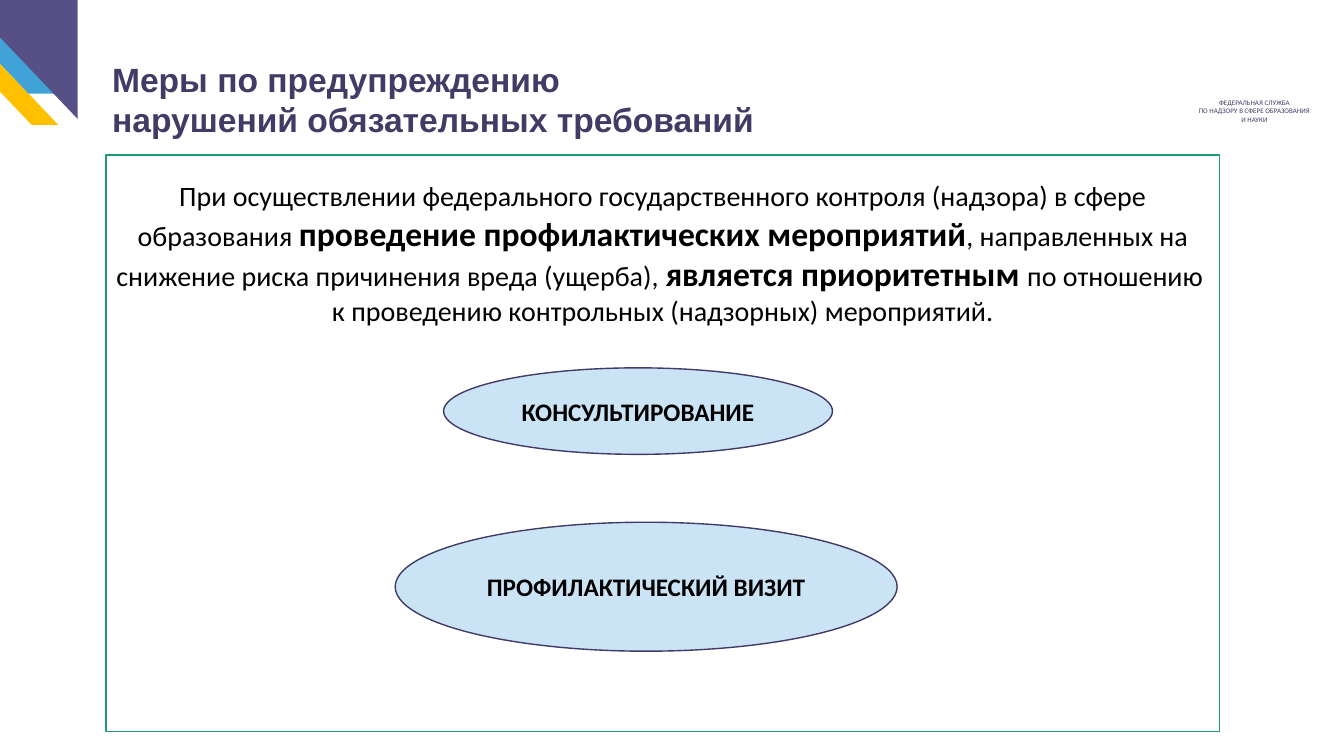
from pptx import Presentation
from pptx.dml.color import RGBColor
from pptx.enum.shapes import MSO_SHAPE
from pptx.enum.text import MSO_ANCHOR, PP_ALIGN
from pptx.util import Cm, Pt

RECTANGLE, OVAL = MSO_SHAPE.RECTANGLE, MSO_SHAPE.OVAL
TOP, MIDDLE = MSO_ANCHOR.TOP, MSO_ANCHOR.MIDDLE
LEFT, CENTER = PP_ALIGN.LEFT, PP_ALIGN.CENTER

CORNER = [
    ("FFC000", [(0, 1.6), (1.47, 3.15), (0.8, 3.15), (0, 2.31)]),
    ("41A2D8", [(0, 0.9), (1.4, 2.36), (0.72, 2.36), (0, 1.6)]),
    ("565087", [(0, 0), (1.96, 0), (1.96, 3), (0, 0.94)]),
]
MEASURES = [
    ("КОНСУЛЬТИРОВАНИЕ", (11.18, 9.27, 9.8, 2.18)),
    ("ПРОФИЛАКТИЧЕСКИЙ ВИЗИТ", (9.96, 13.16, 12.65, 3.25)),
]


def color(value):
    return RGBColor.from_string(value)


class SlideBuilder:
    ink = "413B66"
    plain = {"name": "Calibri", "size": Pt(20), "bold": False}
    strong = {"name": "Calibri", "size": Pt(24), "bold": True}
    label = {"name": "Calibri", "size": Pt(18), "bold": True}
    small = {"name": "Calibri", "size": Pt(5), "bold": False}
    heading = {"name": "Arial", "size": Pt(24), "bold": True}

    def __init__(self, page):
        self.page = page

    def paint(self, shape, fill, line=None):
        shape.shadow.inherit = False
        shape.fill.solid()
        shape.fill.fore_color.rgb = color(fill)
        if line:
            shape.line.color.rgb = color(line)
            shape.line.width = Pt(1)
        else:
            shape.line.fill.background()

    def fill_text(self, shape, paragraphs, ink, align=CENTER, anchor=TOP, **frame_format):
        frame = shape.text_frame
        settings = {"word_wrap": True, "vertical_anchor": anchor, **frame_format}
        for name, value in settings.items():
            setattr(frame, name, value)
        for index, spans in enumerate(paragraphs):
            para = frame.add_paragraph() if index else frame.paragraphs[0]
            para.alignment = align
            for text, style in spans:
                for number, part in enumerate(text.split("\n")):
                    if number:
                        para.add_line_break()
                    span = para.add_run()
                    span.text = part
                    for name, value in style.items():
                        setattr(span.font, name, value)
                    span.font.color.rgb = color(ink)

    def polygon(self, points, fill):
        corners = [(Cm(x), Cm(y)) for x, y in points]
        outline = self.page.shapes.build_freeform(*corners[0])
        outline.add_line_segments(corners[1:], close=True)
        self.paint(outline.convert_to_shape(), fill)

    def title(self, lines, area):
        box = self.page.shapes.title
        for name, value in zip(("left", "top", "width", "height"), area):
            setattr(box, name, Cm(value))
        self.fill_text(box, [[(line, self.heading)] for line in lines], self.ink, LEFT)

    def caption(self, lines, area):
        box = self.page.shapes.add_textbox(*map(Cm, area))
        self.fill_text(box, [[(line, self.small)] for line in lines], self.ink)

    def panel(self, kind, area, fill, line, spans, **frame_format):
        box = self.page.shapes.add_shape(kind, *map(Cm, area))
        self.paint(box, fill, line)
        self.fill_text(box, [spans], "000000", **frame_format)


def main():
    deck = Presentation()
    deck.slide_width, deck.slide_height = Cm(33.87), Cm(19.05)
    builder = SlideBuilder(deck.slides.add_slide(deck.slide_layouts[5]))

    for fill, points in CORNER:
        builder.polygon(points, fill)
    builder.caption(
        ["ФЕДЕРАЛЬНАЯ СЛУЖБА", "ПО НАДЗОРУ В СФЕРЕ ОБРАЗОВАНИЯ И НАУКИ"],
        (29.9, 2.36, 3.43, 0.89),
    )
    builder.title(
        ["Меры по предупреждению", "нарушений обязательных требований"],
        (2.57, 1.35, 26.64, 2.31),
    )
    plain, strong = builder.plain, builder.strong
    builder.panel(
        RECTANGLE, (2.67, 3.91, 28.07, 14.53), "FFFFFF", "1D9A78",
        [
            ("При осуществлении федерального государственного контроля (надзора) "
             "в сфере образования ", plain),
            ("проведение профилактических мероприятий", strong),
            (", направленных на снижение риска причинения вреда (ущерба), ", plain),
            ("является приоритетным ", strong),
            ("по отношению \nк проведению контрольных (надзорных) мероприятий.", plain),
        ],
        margin_left=0, margin_right=0, margin_top=Cm(0.6), margin_bottom=0,
    )
    for text, area in MEASURES:
        builder.panel(OVAL, area, "CAE4F6", builder.ink, [(text, builder.label)], anchor=MIDDLE)
    deck.save("out.pptx")


if __name__ == "__main__":
    main()
